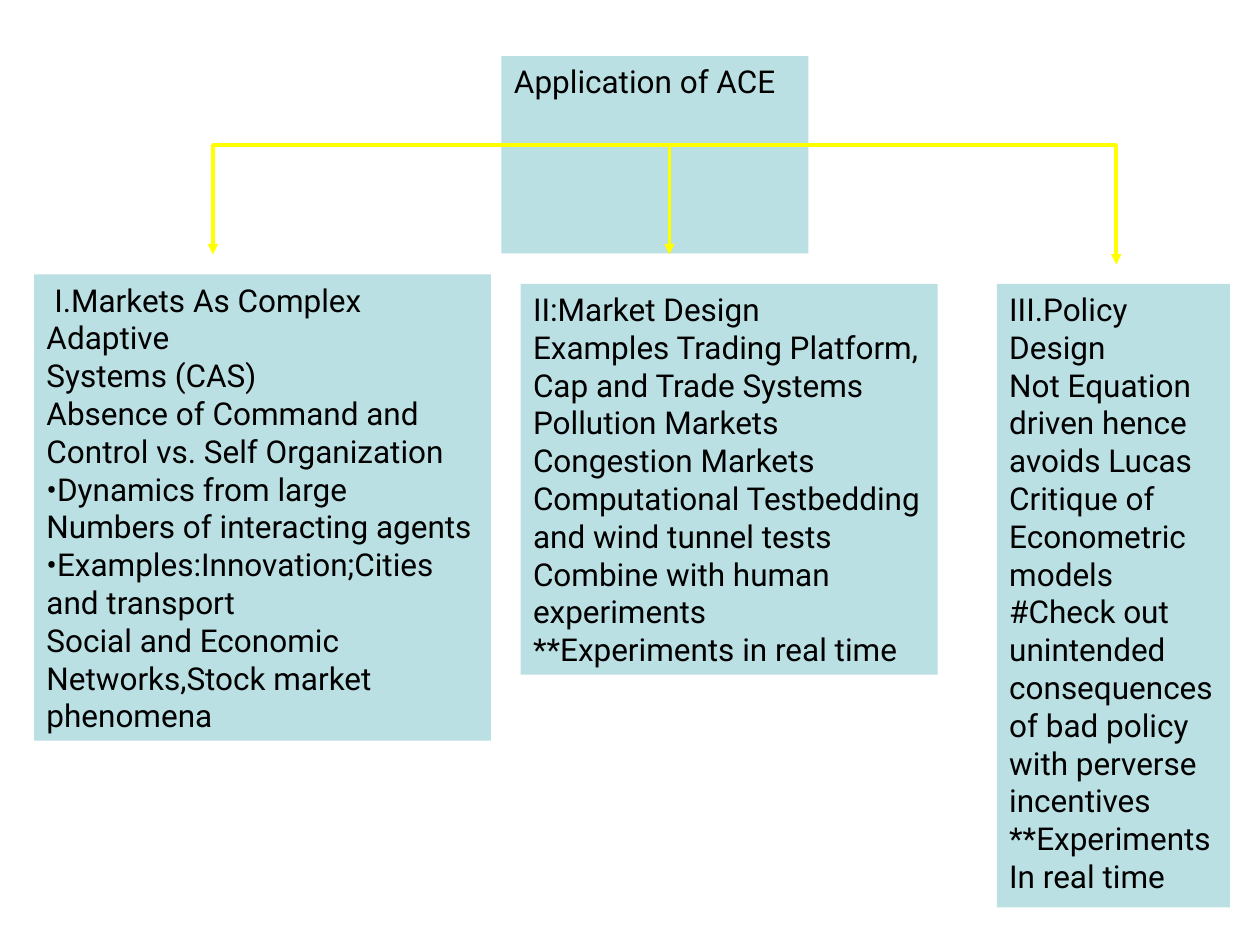
from lxml import etree
from pptx import Presentation
from pptx.dml.color import RGBColor
from pptx.enum.shapes import MSO_CONNECTOR
from pptx.enum.text import MSO_ANCHOR, MSO_AUTO_SIZE, PP_ALIGN
from pptx.oxml.ns import qn
from pptx.util import Pt

BLACK = RGBColor(0x00, 0x00, 0x00)
PALE_BLUE = RGBColor(0xBB, 0xE0, 0xE3)
YELLOW = RGBColor(0xFF, 0xFF, 0x00)
STRAIGHT = MSO_CONNECTOR.STRAIGHT
TOP = MSO_ANCHOR.TOP
LEFT = PP_ALIGN.LEFT
FIT_SHAPE = MSO_AUTO_SIZE.SHAPE_TO_FIT_TEXT

BAR_Y, ARROW_Y = 82.8, 145.4
LEFT_X, MIDDLE_X, RIGHT_X = 121.7, 382.5, 637.9

MARKETS = [
    " I.Markets As Complex Adaptive",
    "Systems (CAS)",
    "Absence of Command and",
    "Control vs. Self Organization",
    "•Dynamics from large",
    "Numbers of interacting agents",
    "•Examples:Innovation;Cities and transport",
    "Social and Economic Networks,Stock market phenomena",
]
DESIGN = [
    "II:Market Design",
    "Examples Trading Platform,",
    "Cap and Trade Systems",
    "Pollution Markets",
    "Congestion Markets",
    "Computational Testbedding and wind tunnel tests",
    "Combine with human experiments",
    "**Experiments in real time",
]
POLICY = [
    "III.Policy Design",
    "Not Equation driven hence",
    "avoids Lucas Critique of Econometric models",
    "#Check out unintended consequences of bad policy with perverse incentives",
    "**Experiments",
    "In real time",
]


class Diagram:
    """Draws filled text boxes and yellow arrows on one slide."""

    def __init__(self, slide, font="Roboto", size=18, weight=2):
        self.slide = slide
        self.font, self.size, self.weight = font, size, weight

    def fill_text(self, sp, lines):
        sp.fill.solid()
        sp.fill.fore_color.rgb = PALE_BLUE
        tf = sp.text_frame
        tf.text = "\n".join(lines)
        tf.word_wrap = True
        tf.auto_size = FIT_SHAPE
        tf.vertical_anchor = TOP
        for p in tf.paragraphs:
            p.alignment = LEFT
            for r in p.runs:
                r.font.name = self.font
                r.font.size = Pt(self.size)
                r.font.color.rgb = BLACK

    def title(self, text, x, y, w, h):
        sp = self.slide.shapes.title
        sp.left, sp.top, sp.width, sp.height = Pt(x), Pt(y), Pt(w), Pt(h)
        self.fill_text(sp, [text])

    def box(self, lines, x, y, w, h):
        sp = self.slide.shapes.add_textbox(Pt(x), Pt(y), Pt(w), Pt(h))
        self.fill_text(sp, lines)

    def style_line(self, sp, ends):
        sp.line.color.rgb = YELLOW
        sp.line.width = Pt(self.weight)
        ln = sp.line._get_or_add_ln()
        for end in ends:
            etree.SubElement(ln, qn(end), type="triangle")

    def bracket(self, points):
        start, *rest = [(Pt(x), Pt(y)) for x, y in points]
        builder = self.slide.shapes.build_freeform(*start)
        builder.add_line_segments(rest, close=False)
        sp = builder.convert_to_shape()
        sp.fill.background()
        sp.shadow.inherit = False
        self.style_line(sp, ["a:headEnd", "a:tailEnd"])

    def arrow(self, x, y1, y2):
        sp = self.slide.shapes.add_connector(STRAIGHT, Pt(x), Pt(y1), Pt(x), Pt(y2))
        self.style_line(sp, ["a:tailEnd"])
        etree.SubElement(sp._element.spPr, qn("a:effectLst"))


def main():
    prs = Presentation()
    prs.slide_width, prs.slide_height = Pt(720), Pt(540)
    s = Diagram(prs.slides.add_slide(prs.slide_layouts[5]))
    s.title("Application of ACE", 286.5, 32, 175.5, 28.8)
    s.box(MARKETS, 19.5, 156.8, 261, 266.5)
    s.box(DESIGN, 297.5, 162.2, 238.3, 223.3)
    s.box(POLICY, 569.6, 162.2, 133.2, 356.4)
    s.bracket([(LEFT_X, ARROW_Y), (LEFT_X, BAR_Y), (RIGHT_X, BAR_Y), (RIGHT_X, 151.2)])
    s.arrow(MIDDLE_X, BAR_Y, ARROW_Y)
    prs.save("out.pptx")


if __name__ == "__main__":
    main()
